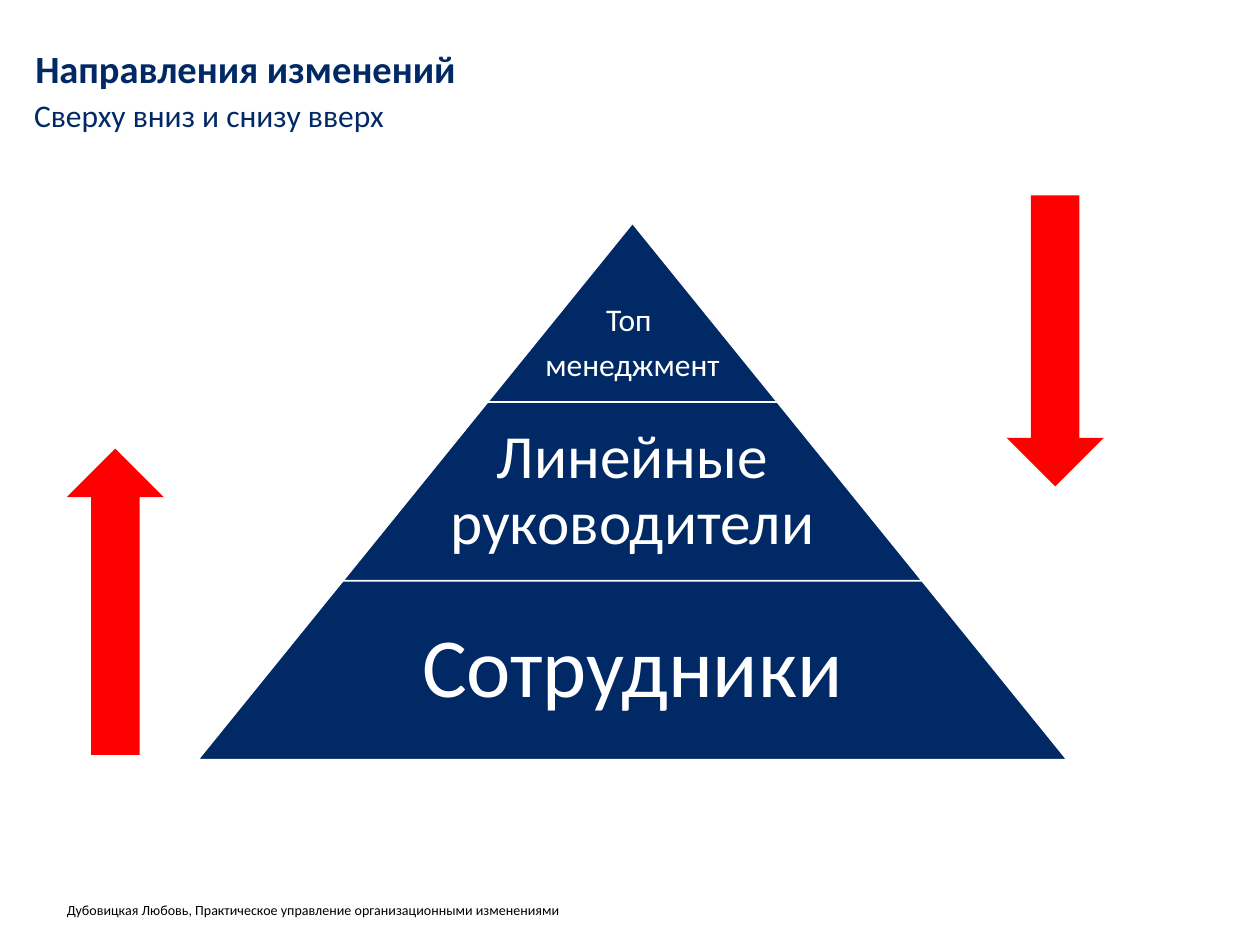
from dataclasses import dataclass

import pptx
import pptx.dml.color
import pptx.enum.shapes
import pptx.enum.text
import pptx.oxml.ns
import pptx.util
from lxml import etree

Inches = pptx.util.Inches
Pt = pptx.util.Pt
Shapes = pptx.enum.shapes.MSO_SHAPE
Anchor = pptx.enum.text.MSO_ANCHOR
Align = pptx.enum.text.PP_ALIGN


@dataclass(frozen=True)
class Theme:
    font: str = "Calibri"
    navy: str = "002965"
    red: str = "FF0000"
    white: str = "FFFFFF"
    black: str = "000000"
    title_size: int = 22
    subtitle_size: int = 18
    footer_size: int = 8


@dataclass(frozen=True)
class Tier:
    lines: tuple[str, ...]
    size: int
    text_share: float  # text width as a share of the tier width
    inset: float
    top_inset: float


@dataclass(frozen=True)
class Arrow:
    left: float
    top: float
    height: float
    rotation: int


THEME = Theme()
PYRAMID_CENTER, PYRAMID_TOP = 5.02, 1.77
TIER_WIDTH_STEP, TIER_HEIGHT = 2.3, 1.42
ARROW_WIDTH = 0.77

TIERS = (
    Tier(("Топ ", "менеджмент"), 18, 1, 0.03, 0.53),
    Tier(("Линейные руководители",), 35, 0.65, 0.05, 0.05),
    Tier(("Сотрудники",), 48, 0.65, 0.07, 0.07),
)
ARROWS = (Arrow(7.99, 1.55, 2.31, 0), Arrow(0.53, 3.56, 2.43, 180))


def color(value: str) -> pptx.dml.color.RGBColor:
    return pptx.dml.color.RGBColor.from_string(value)


def set_values(target, values: dict) -> None:
    for name, value in values.items():
        setattr(target, name, value)


def place(box, left: float, top: float, width: float, height: float) -> None:
    set_values(box, {"left": Inches(left), "top": Inches(top),
                     "width": Inches(width), "height": Inches(height)})


def write(box, lines: tuple[str, ...], size: int, ink: str, *, bold: bool = False,
          inset: float = 0, top_inset: float = 0, wrap: bool = True,
          anchor=Anchor.TOP, align=Align.LEFT, line_spacing: float = 1,
          gap: float = 0) -> None:
    """Fill a box with one paragraph per line, spaced by gap points."""
    frame = box.text_frame
    set_values(frame, {
        "auto_size": pptx.enum.text.MSO_AUTO_SIZE.NONE,
        "word_wrap": wrap, "vertical_anchor": anchor,
        "margin_left": Inches(inset), "margin_right": Inches(inset),
        "margin_top": Inches(top_inset), "margin_bottom": Inches(inset),
    })
    for index, line in enumerate(lines):
        para = frame.add_paragraph() if index else frame.paragraphs[0]
        last = index == len(lines) - 1
        set_values(para, {"alignment": align, "line_spacing": line_spacing,
                          "space_before": Pt(0), "space_after": Pt(0 if last else gap)})
        span = para.add_run()
        span.text = line
        set_values(span.font, {"name": THEME.font, "size": Pt(size), "bold": bold})
        span.font.color.rgb = color(ink)


def remove_bullet(para) -> None:
    properties = para._p.get_or_add_pPr()
    set_values(para, {"space_before": Pt(0)})
    properties.set("marL", "0")
    properties.set("indent", "0")
    etree.SubElement(properties, pptx.oxml.ns.qn("a:buNone"))


def draw_shape(page, kind, left: float, top: float, width: float, height: float,
               fill: str):
    shape = page.shapes.add_shape(kind, Inches(left), Inches(top),
                                  Inches(width), Inches(height))
    shape.shadow.inherit = False
    shape.fill.solid()
    shape.fill.fore_color.rgb = color(fill)
    shape.line.fill.background()
    return shape


def draw_tier(page, tier: Tier, index: int) -> None:
    width = TIER_WIDTH_STEP * (index + 1)
    top = PYRAMID_TOP + TIER_HEIGHT * index
    band = draw_shape(page, Shapes.TRAPEZOID, PYRAMID_CENTER - width / 2, top,
                      width, TIER_HEIGHT, THEME.navy)
    band.adjustments[0] = TIER_WIDTH_STEP / 2 / TIER_HEIGHT
    band.line.color.rgb = color(THEME.white)
    band.line.width = Pt(1)

    text_width = width * tier.text_share
    label = page.shapes.add_textbox(
        Inches(PYRAMID_CENTER - text_width / 2), Inches(top),
        Inches(text_width), Inches(TIER_HEIGHT))
    write(label, tier.lines, tier.size, THEME.white, inset=tier.inset,
          top_inset=tier.top_inset, anchor=Anchor.MIDDLE, align=Align.CENTER,
          line_spacing=0.9, gap=tier.size * 0.35)


def draw_arrow(page, arrow: Arrow) -> None:
    shape = draw_shape(page, Shapes.DOWN_ARROW, arrow.left, arrow.top,
                       ARROW_WIDTH, arrow.height, THEME.red)
    shape.rotation = arrow.rotation


def main() -> None:
    deck = pptx.Presentation()
    deck.slide_width, deck.slide_height = Inches(10), Inches(7.5)
    page = deck.slides.add_slide(deck.slide_layouts[1])

    # Title and subtitle
    title, subtitle = page.placeholders
    place(title, 0.28, 0.28, 9.45, 0.43)
    write(title, ("Направления изменений",), THEME.title_size, THEME.navy,
          bold=True, top_inset=0.12, line_spacing=0.9)
    place(subtitle, 0.27, 0.76, 9.45, 0.31)
    write(subtitle, ("Сверху вниз и снизу вверх",), THEME.subtitle_size, THEME.navy)
    remove_bullet(subtitle.text_frame.paragraphs[0])

    # Pyramid of staff levels
    for index, tier in enumerate(TIERS):
        draw_tier(page, tier, index)

    # Directions of change
    for arrow in ARROWS:
        draw_arrow(page, arrow)

    # Footer
    footer = page.shapes.add_textbox(Inches(0.53), Inches(7.12), Inches(6.41), Inches(0.17))
    write(footer, ("Дубовицкая Любовь, Практическое управление организационными изменениями",),
          THEME.footer_size, THEME.black, wrap=False, anchor=Anchor.BOTTOM)

    deck.save("out.pptx")


if __name__ == "__main__":
    main()
